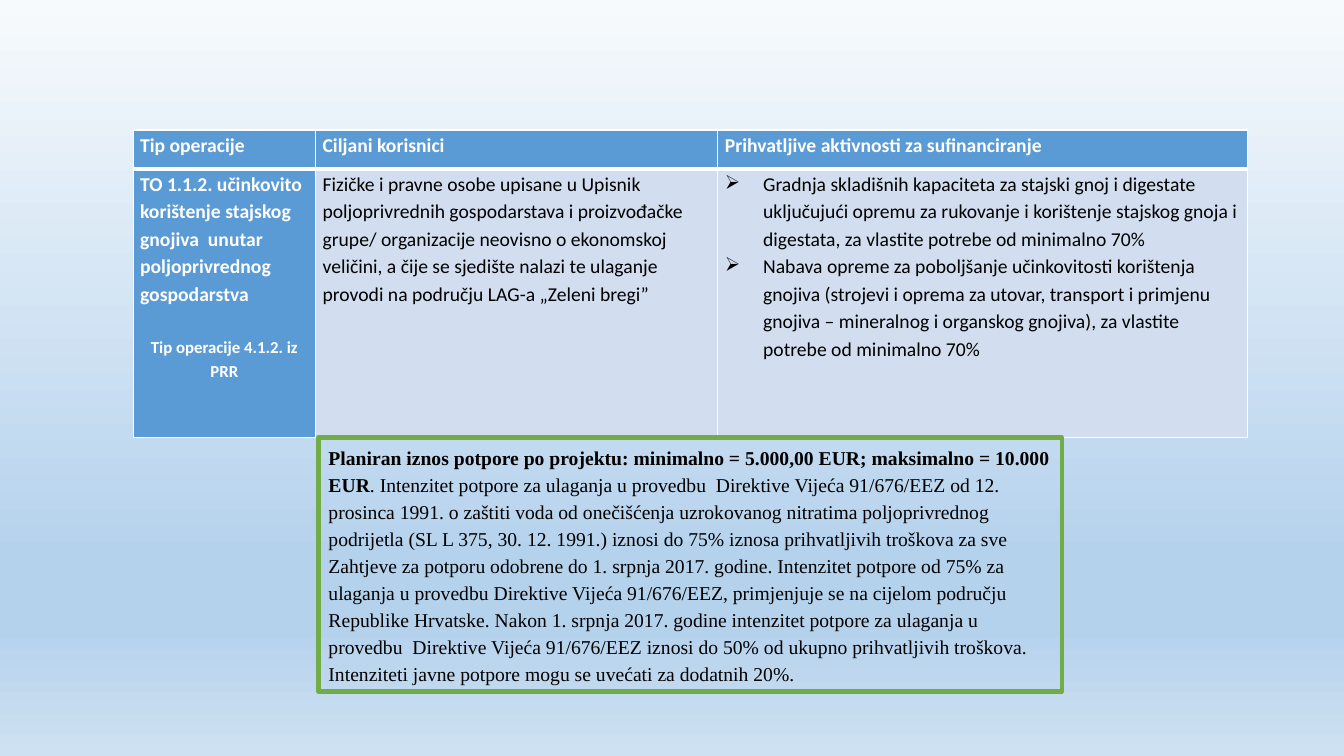
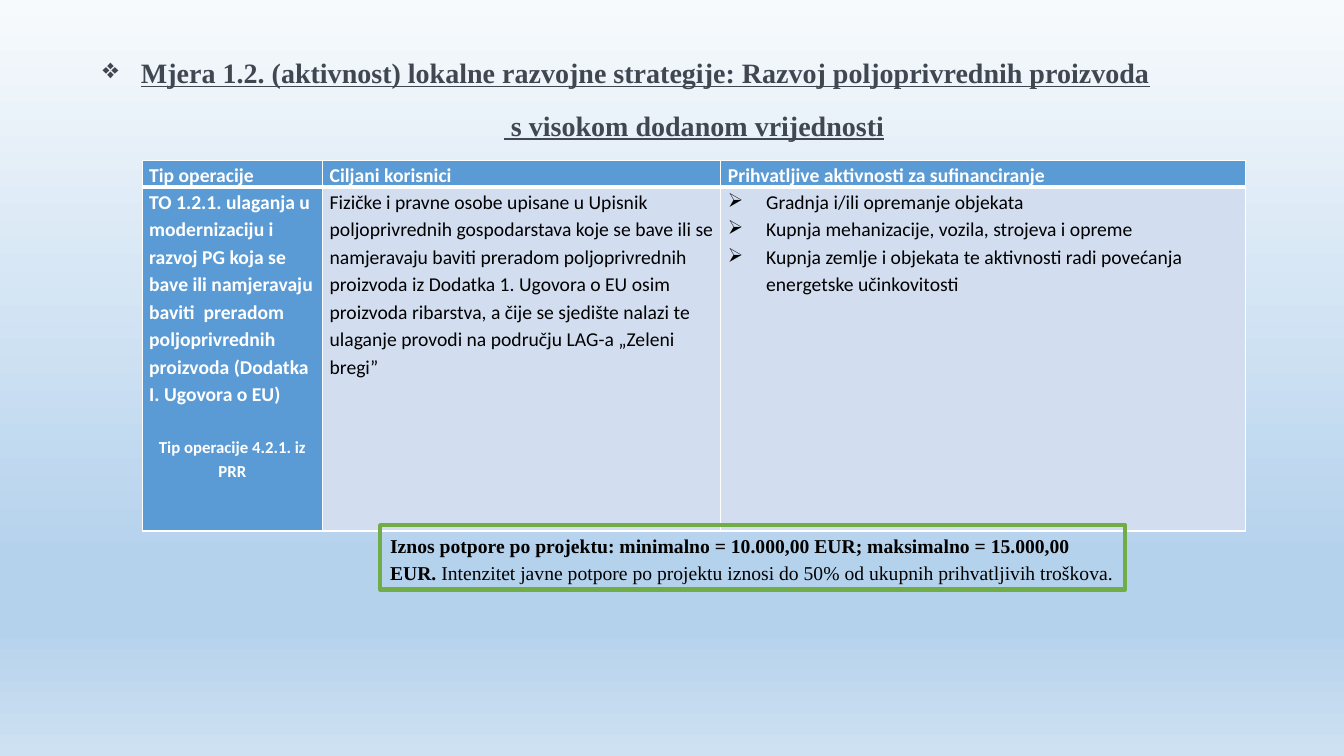
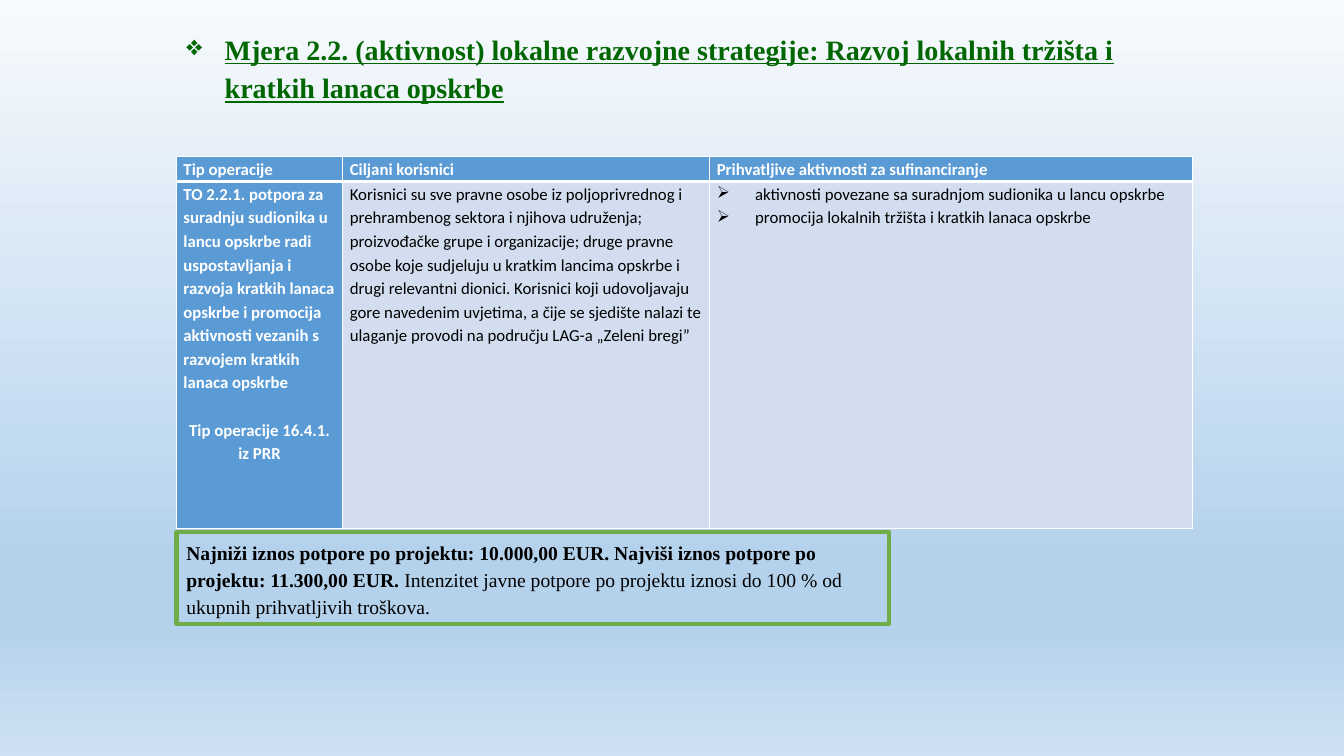
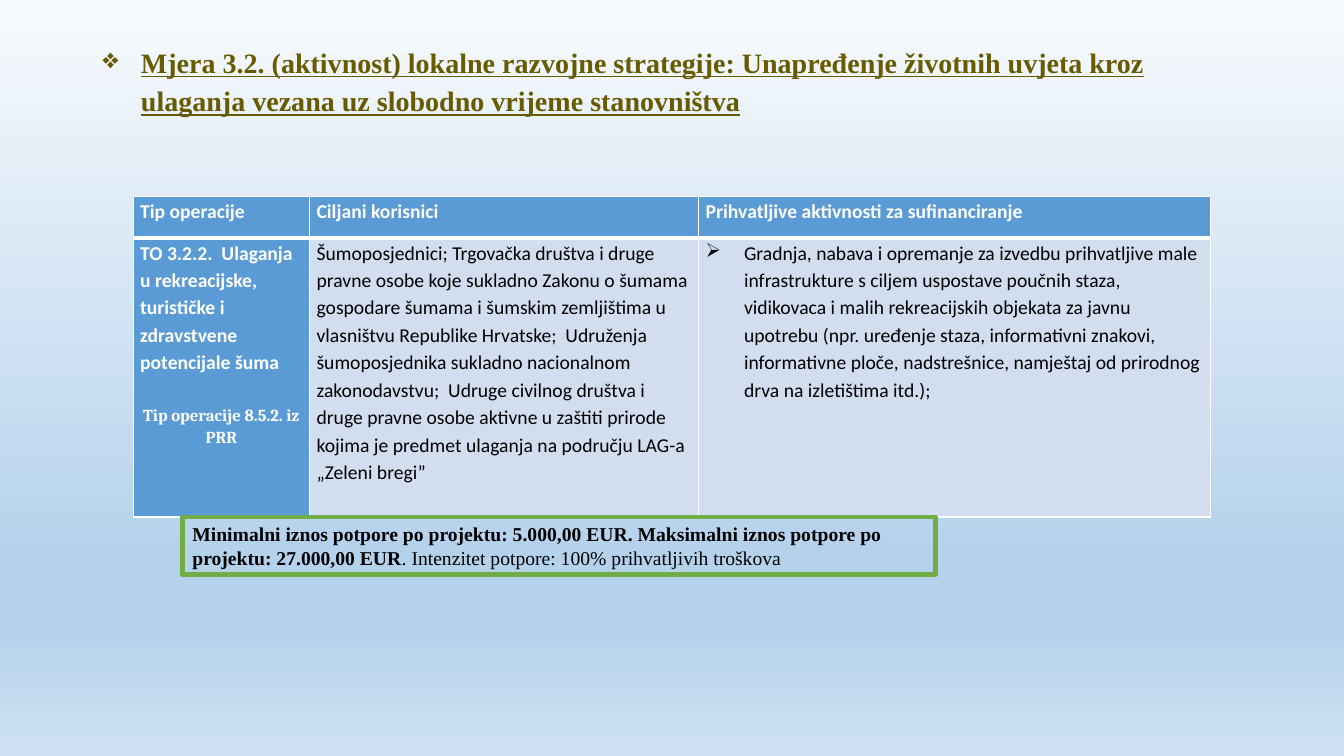
import lxml.etree
import pptx
import pptx.dml.color
import pptx.enum.shapes
import pptx.enum.text
import pptx.oxml.ns
import pptx.util

PX = 9144
COLORS = {
    "header": "5B9BD5", "body": "D2DEEF", "white": "FFFFFF", "black": "000000",
    "frame": "70AD47", "slate": "414751", "green": "006600", "olive": "675A00",
}
BACKGROUND_STOPS = [(0, "F7FAFD"), (74, "B5D2EC"), (83, "B5D2EC"), (100, "CEE1F2")]
HEADERS = ["Tip operacije", "Ciljani korisnici", "Prihvatljive aktivnosti za sufinanciranje"]
SERIF = "Times New Roman"
SANS = "Calibri"
INDENT = 38 * PX
qn = pptx.oxml.ns.qn
rgb = pptx.dml.color.RGBColor.from_string
CENTER = pptx.enum.text.PP_ALIGN.CENTER

SLIDES = [
    {
        "table": (132, 129), "columns": [181, 399, 525], "rows": [39, 266], "size": 14,
        "operation": "TO 1.1.2. učinkovito korištenje stajskog gnojiva  unutar poljoprivrednog gospodarstva",
        "programme": "Tip operacije 4.1.2. iz PRR", "programme_font": SANS,
        "users": "Fizičke i pravne osobe upisane u Upisnik poljoprivrednih gospodarstava i proizvođačke grupe/ organizacije neovisno o ekonomskoj veličini, a čije se sjedište nalazi te ulaganje provodi na području LAG-a „Zeleni bregi”",
        "activities": [
            "Gradnja skladišnih kapaciteta za stajski gnoj i digestate uključujući opremu za rukovanje i korištenje stajskog gnoja i digestata, za vlastite potrebe od minimalno 70%",
            "Nabava opreme za poboljšanje učinkovitosti korištenja gnojiva (strojevi i oprema za utovar, transport i primjenu gnojiva – mineralnog i organskog gnojiva), za vlastite potrebe od minimalno 70%",
        ],
        "support": (316, 434, 737, 252), "support_spacing": 1.15,
        "amount": "Planiran iznos potpore po projektu: minimalno = 5.000,00 EUR; maksimalno = 10.000 EUR",
        "intensity": ". Intenzitet potpore za ulaganja u provedbu  Direktive Vijeća 91/676/EEZ od 12. prosinca 1991. o zaštiti voda od onečišćenja uzrokovanog nitratima poljoprivrednog podrijetla (SL L 375, 30. 12. 1991.) iznosi do 75% iznosa prihvatljivih troškova za sve Zahtjeve za potporu odobrene do 1. srpnja 2017. godine. Intenzitet potpore od 75% za ulaganja u provedbu Direktive Vijeća 91/676/EEZ, primjenjuje se na cijelom području Republike Hrvatske. Nakon 1. srpnja 2017. godine intenzitet potpore za ulaganja u provedbu  Direktive Vijeća 91/676/EEZ iznosi do 50% od ukupno prihvatljivih troškova. Intenziteti javne potpore mogu se uvećati za dodatnih 20%.",
    },
    {
        "title": (92, 45, 1193, 102), "title_color": "slate", "title_after": 10,
        "title_lines": ["Mjera 1.2. (aktivnost) lokalne razvojne strategije: Razvoj poljoprivrednih proizvoda", " s visokom dodanom vrijednosti"],
        "table": (141, 159), "columns": [179, 395, 520], "rows": [26, 341], "size": 14,
        "operation": "TO 1.2.1. ulaganja u modernizaciju i razvoj PG koja se bave ili namjeravaju baviti  preradom  poljoprivrednih proizvoda (Dodatka I. Ugovora o EU)",
        "programme": "Tip operacije 4.2.1. iz PRR", "programme_font": SANS,
        "users": "Fizičke i pravne osobe upisane u Upisnik poljoprivrednih gospodarstava koje se bave ili se namjeravaju baviti preradom poljoprivrednih proizvoda iz Dodatka 1. Ugovora o EU osim proizvoda ribarstva, a čije se sjedište nalazi te ulaganje provodi na području LAG-a „Zeleni bregi”",
        "activities": [
            "Gradnja i/ili opremanje objekata",
            "Kupnja mehanizacije, vozila, strojeva i opreme",
            "Kupnja zemlje i objekata te aktivnosti radi povećanja energetske učinkovitosti",
        ],
        "support": (377, 521, 739, 64), "support_spacing": 1.15,
        "amount": "Iznos potpore po projektu: minimalno = 10.000,00 EUR; maksimalno = 15.000,00 EUR. ",
        "intensity": "Intenzitet javne potpore po projektu iznosi do 50% od ukupnih prihvatljivih troškova.",
    },
    {
        "title": (175, 22, 982, 88), "title_color": "green", "title_after": 0,
        "title_lines": ["Mjera 2.2. (aktivnost) lokalne razvojne strategije: Razvoj lokalnih tržišta i kratkih lanaca opskrbe"],
        "table": (175, 155), "columns": [165, 364, 479], "rows": [25, 344], "size": 12,
        "operation": "TO 2.2.1. potpora za suradnju sudionika u lancu opskrbe radi uspostavljanja i razvoja kratkih lanaca opskrbe i promocija aktivnosti vezanih s razvojem kratkih lanaca opskrbe",
        "programme": "Tip operacije 16.4.1. iz PRR", "programme_font": SANS,
        "users": "Korisnici su sve pravne osobe iz poljoprivrednog i prehrambenog sektora i njihova udruženja; proizvođačke grupe i organizacije; druge pravne osobe koje sudjeluju u kratkim lancima opskrbe i drugi relevantni dionici. Korisnici koji udovoljavaju gore navedenim uvjetima, a čije se sjedište nalazi te ulaganje provodi na području LAG-a „Zeleni bregi”",
        "activities": [
            "aktivnosti povezane sa suradnjom sudionika u lancu opskrbe",
            "promocija lokalnih tržišta i kratkih lanaca opskrbe",
        ],
        "support": (175, 528, 707, 91), "support_spacing": 1.15,
        "amount": "Najniži iznos potpore po projektu: 10.000,00 EUR. Najviši iznos potpore po projektu: 11.300,00 EUR. ",
        "intensity": "Intenzitet javne potpore po projektu iznosi do 100 % od ukupnih prihvatljivih troškova.",
    },
    {
        "title": (92, 35, 1110, 84), "title_color": "olive", "title_after": 0,
        "title_lines": ["Mjera 3.2. (aktivnost) lokalne razvojne strategije: Unapređenje životnih uvjeta kroz ulaganja vezana uz slobodno vrijeme stanovništva"],
        "table": (132, 195), "columns": [175, 386, 508], "rows": [41, 277], "size": 14,
        "operation": "TO 3.2.2.  Ulaganja u rekreacijske, turističke i zdravstvene potencijale šuma",
        "programme": "Tip operacije 8.5.2. iz PRR", "programme_font": "Cambria",
        "users": "Šumoposjednici; Trgovačka društva i druge pravne osobe koje sukladno Zakonu o šumama gospodare šumama i šumskim zemljištima u vlasništvu Republike Hrvatske;  Udruženja šumoposjednika sukladno nacionalnom zakonodavstvu;  Udruge civilnog društva i druge pravne osobe aktivne u zaštiti prirode kojima je predmet ulaganja na području LAG-a „Zeleni bregi”",
        "activities": [
            "Gradnja, nabava i opremanje za izvedbu prihvatljive male infrastrukture s ciljem uspostave poučnih staza, vidikovaca i malih rekreacijskih objekata za javnu upotrebu (npr. uređenje staza, informativni znakovi, informativne ploče, nadstrešnice, namještaj od prirodnog drva na izletištima itd.);",
        ],
        "support": (181, 513, 747, 57), "support_spacing": 1,
        "amount": "Minimalni iznos potpore po projektu: 5.000,00 EUR. Maksimalni iznos potpore po projektu: 27.000,00 EUR",
        "intensity": ". Intenzitet potpore: 100% prihvatljivih troškova",
    },
]


def add_paragraph(frame, texts, size, font, color, bullet=None, spacing=1.15, after=0, underline=False):
    paragraph = frame.paragraphs[0]
    if paragraph.runs:
        paragraph = frame.add_paragraph()
    paragraph.alignment = pptx.enum.text.PP_ALIGN.LEFT
    paragraph.line_spacing = spacing
    paragraph.space_after = pptx.util.Pt(after)
    if bullet:
        properties = paragraph._p.get_or_add_pPr()
        properties.set("marL", str(INDENT))
        properties.set("indent", str(-INDENT))
        lxml.etree.SubElement(properties, qn("a:buChar")).set("char", bullet)
    for text, bold in texts:
        run = paragraph.add_run()
        run.text = text
        run.font.size = pptx.util.Pt(size)
        run.font.name = font
        run.font.bold = bold
        run.font.underline = underline
        run.font.color.rgb = rgb(COLORS[color])
    return paragraph


def style_cell(cell, row, column):
    cell.margin_left = cell.margin_right = 7 * PX
    cell.margin_top = cell.margin_bottom = 0
    properties = cell._tc.get_or_add_tcPr()
    thick_side = "a:lnT" if row else "a:lnB"
    for side in ("a:lnL", "a:lnR", "a:lnT", "a:lnB"):
        width = 3 if side == thick_side else 1
        border = lxml.etree.SubElement(properties, qn(side), w=str(pptx.util.Pt(width)))
        line_fill = lxml.etree.SubElement(border, qn("a:solidFill"))
        lxml.etree.SubElement(line_fill, qn("a:srgbClr"), val=COLORS["white"])
    cell.fill.solid()
    cell.fill.fore_color.rgb = rgb(COLORS["body" if row and column else "header"])


presentation = pptx.Presentation()
presentation.slide_width = 1333 * PX
presentation.slide_height = 750 * PX

master = presentation.slide_master
background = master.background.fill
background.gradient()
background.gradient_angle = 270
stop_list = next(master.element.iter(qn("a:gsLst")))
for stop in list(stop_list):
    stop_list.remove(stop)
for position, color in BACKGROUND_STOPS:
    stop = lxml.etree.SubElement(stop_list, qn("a:gs"), pos=str(position * 1000))
    lxml.etree.SubElement(stop, qn("a:srgbClr"), val=color)

for content in SLIDES:
    slide = presentation.slides.add_slide(presentation.slide_layouts[6])
    size = content["size"]

    if "title" in content:
        title = slide.shapes.add_textbox(*[value * PX for value in content["title"]])
        title.text_frame.word_wrap = True
        title.text_frame.auto_size = pptx.enum.text.MSO_AUTO_SIZE.SHAPE_TO_FIT_TEXT
        for index, line in enumerate(content["title_lines"]):
            paragraph = add_paragraph(
                title.text_frame, [(line, True)], 20, SERIF, content["title_color"],
                bullet=None if index else "❖", after=content["title_after"], underline=True)
            if index:
                paragraph.alignment = CENTER

    left, top = content["table"]
    table = slide.shapes.add_table(
        2, 3, left * PX, top * PX, sum(content["columns"]) * PX, sum(content["rows"]) * PX).table
    table.first_row = False
    table.horz_banding = False
    for column, width in enumerate(content["columns"]):
        table.columns[column].width = width * PX
    for row, height in enumerate(content["rows"]):
        table.rows[row].height = height * PX
        for column in range(3):
            style_cell(table.cell(row, column), row, column)
    for column, header in enumerate(HEADERS):
        add_paragraph(table.cell(0, column).text_frame, [(header, True)], size, SANS, "white")

    operation, users, activities = [table.cell(1, column).text_frame for column in range(3)]
    add_paragraph(operation, [(content["operation"], True)], size, SANS, "white")
    programme = add_paragraph(
        operation, [(content["programme"], True)], 12, content["programme_font"], "white")
    programme.alignment = CENTER
    programme.space_before = pptx.util.Pt(round(size * 1.4))
    add_paragraph(users, [(content["users"], False)], size, SANS, "black")
    for activity in content["activities"]:
        add_paragraph(activities, [(activity, False)], size, SANS, "black", bullet="➢")

    support = slide.shapes.add_shape(
        pptx.enum.shapes.MSO_SHAPE.RECTANGLE, *[value * PX for value in content["support"]])
    support.shadow.inherit = False
    support.fill.background()
    support.line.color.rgb = rgb(COLORS["frame"])
    support.line.width = pptx.util.Pt(3)
    support.text_frame.word_wrap = True
    support.text_frame.auto_size = pptx.enum.text.MSO_AUTO_SIZE.SHAPE_TO_FIT_TEXT
    support.text_frame.vertical_anchor = pptx.enum.text.MSO_ANCHOR.TOP
    add_paragraph(
        support.text_frame, [(content["amount"], True), (content["intensity"], False)],
        14, SERIF, "black", spacing=content["support_spacing"])

presentation.save("out.pptx")
